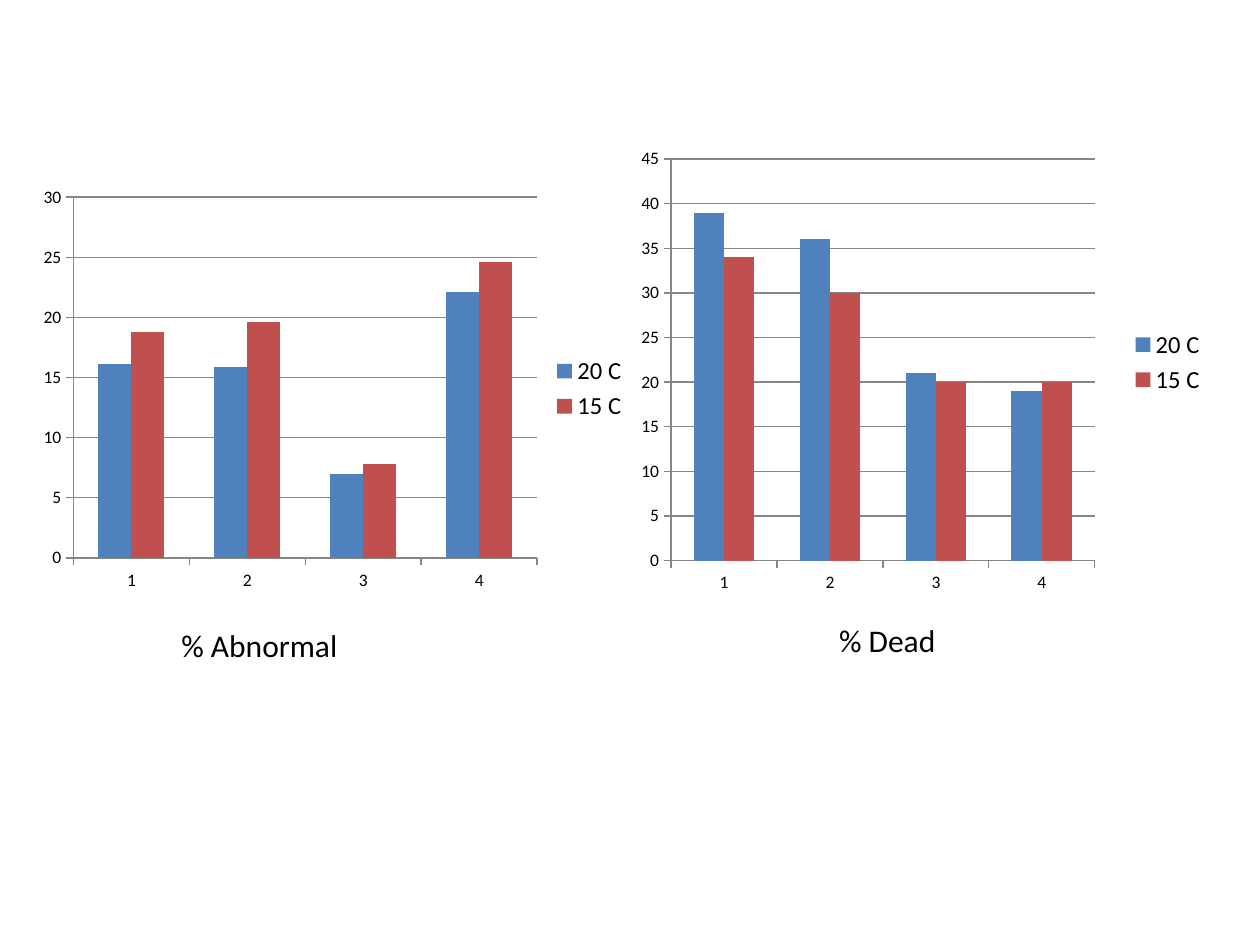
from lxml import etree
from pptx import Presentation
from pptx import util as u
from pptx.chart import data
from pptx.dml import color
from pptx.enum import chart as ce
from pptx.oxml import ns


def paint(target, value):
    target.solid()
    target.fore_color.rgb = color.RGBColor.from_string(value)


presentation = Presentation()
presentation.slide_width = u.Inches(10)
presentation.slide_height = u.Inches(7.5)
slide = presentation.slides.add_slide(presentation.slide_layouts[6])

series_colors = {"20 C": "4F81BD", "15 C": "C0504D"}
panels = [
    {
        "caption": "% Abnormal",
        "chart_box": (0.25, 1.42, 4.83, 3.33),
        "caption_box": (1, 4.92, 3, 0.4),
        "indent": 0.44,
        "values": [(16.1, 15.9, 7, 22.1), (18.8, 19.6, 7.8, 24.6)],
        "top": 30,
        "plot": None,
    },
    {
        "caption": "% Dead",
        "chart_box": (5, 1, 4.67, 3.75),
        "caption_box": (6.17, 4.88, 3.17, 0.4),
        "indent": 0.49,
        "values": [(39, 36, 21, 19), (34, 30, 20, 20)],
        "top": 45,
        "plot": {"x": 0.07, "y": 0.07, "w": 0.72, "h": 0.85},
    },
]

for panel in panels:
    chart_data = data.CategoryChartData()
    chart_data.categories = ["1", "2", "3", "4"]
    for name, values in zip(series_colors, panel["values"]):
        chart_data.add_series(name, values)
    chart = slide.shapes.add_chart(
        ce.XL_CHART_TYPE.COLUMN_CLUSTERED,
        *map(u.Inches, panel["chart_box"]),
        chart_data,
    ).chart
    chart.has_title = False
    chart.font.name = "Calibri"
    chart.font.size = u.Pt(10)
    paint(chart.font.fill, "000000")

    plot = chart.plots[0]
    plot.gap_width = 150
    plot.overlap = 0
    plot.vary_by_categories = False
    for series, fill in zip(plot.series, series_colors.values()):
        paint(series.format.fill, fill)

    chart.value_axis.minimum_scale = 0
    chart.value_axis.maximum_scale = panel["top"]
    chart.value_axis.major_unit = 5
    chart.value_axis.has_major_gridlines = True
    for axis in (chart.category_axis, chart.value_axis):
        axis.major_tick_mark = ce.XL_TICK_MARK.OUTSIDE
        paint(axis.format.line.fill, "868686")
    paint(chart.value_axis.major_gridlines.format.line.fill, "868686")

    chart.has_legend = True
    chart.legend.position = ce.XL_LEGEND_POSITION.RIGHT
    chart.legend.include_in_layout = False
    chart.legend.font.name = "Calibri"
    chart.legend.font.size = u.Pt(14)
    paint(chart.legend.font.fill, "000000")

    if panel["plot"]:
        plot_area = chart.element.find(".//" + ns.qn("c:plotArea"))
        for layout in plot_area.findall(ns.qn("c:layout")):
            plot_area.remove(layout)
        layout = etree.Element(ns.qn("c:layout"))
        manual = etree.SubElement(layout, ns.qn("c:manualLayout"))
        settings = {"layoutTarget": "inner", "xMode": "edge", "yMode": "edge"}
        for tag, value in (settings | panel["plot"]).items():
            etree.SubElement(manual, ns.qn("c:" + tag), val=str(value))
        plot_area.insert(0, layout)

    caption = slide.shapes.add_textbox(*map(u.Inches, panel["caption_box"]))
    frame = caption.text_frame
    frame.word_wrap = True
    frame.margin_left = u.Inches(panel["indent"])
    frame.text = panel["caption"]
    font = frame.paragraphs[0].runs[0].font
    font.name = "Calibri"
    font.size = u.Pt(18)
    paint(font.fill, "000000")

presentation.save("out.pptx")
